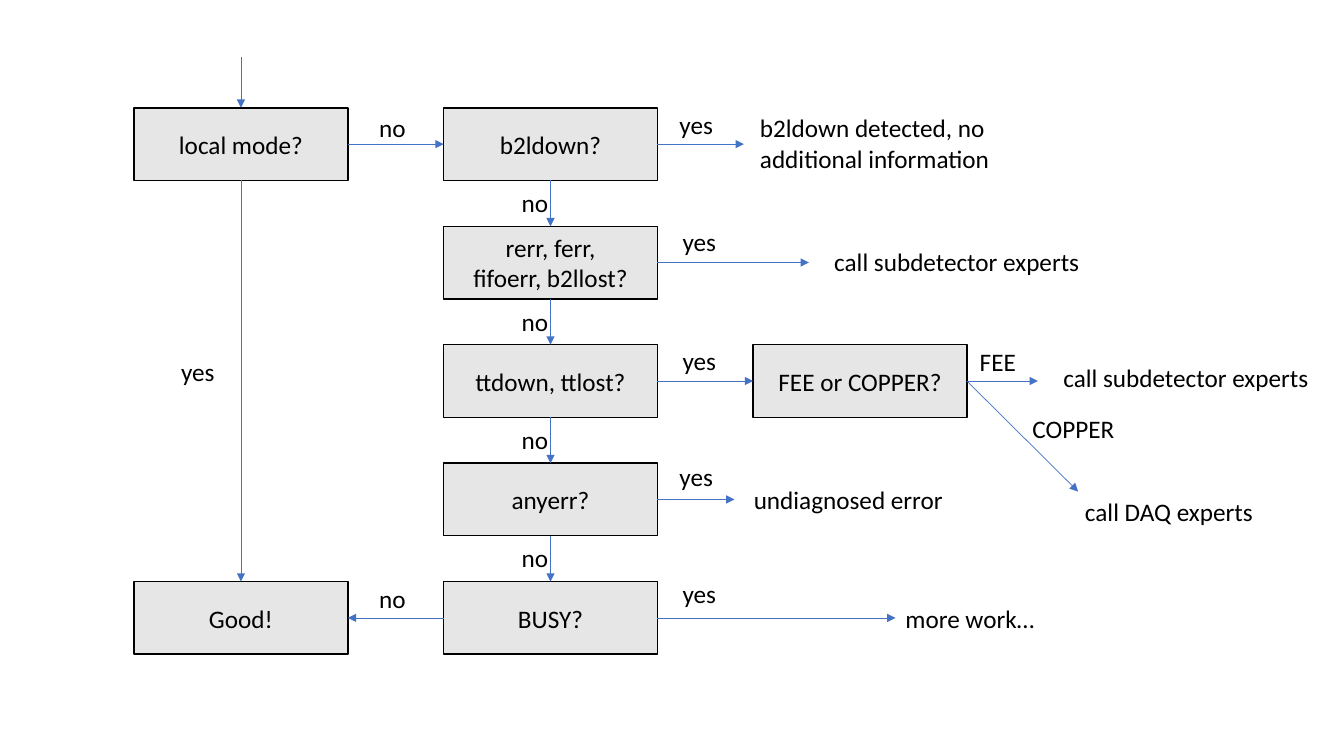
from dataclasses import dataclass

from lxml.etree import SubElement
from pptx import Presentation
from pptx.dml.color import RGBColor
from pptx.enum.shapes import MSO_CONNECTOR, MSO_SHAPE
from pptx.enum.text import MSO_ANCHOR, PP_ALIGN
from pptx.oxml.ns import qn
from pptx.util import Inches, Pt

TOP, LEFT, BOTTOM, RIGHT = range(4)  # connection sites of a rectangle


@dataclass(frozen=True)
class Theme:
    font: str = "Calibri"
    text_size: float = 18
    text: RGBColor = RGBColor(0x00, 0x00, 0x00)
    box_fill: RGBColor = RGBColor(0xE7, 0xE6, 0xE6)
    box_line: RGBColor = RGBColor(0x00, 0x00, 0x00)
    box_line_width: float = 1
    arrow: RGBColor = RGBColor(0x44, 0x72, 0xC4)
    arrow_width: float = 0.5


class Flowchart:
    """Places elements by column and row of a regular grid of boxes."""

    origin_x, origin_y = 1.33, 1.07
    column_pitch, row_pitch = 3.07, 1.175
    box_width, box_height = 2.12, 0.72
    line_height = 0.4

    def __init__(self, page, theme):
        self.page = page
        self.theme = theme

    def x(self, column):
        return Inches(self.origin_x + column * self.column_pitch)

    def y(self, row):
        return Inches(self.origin_y + row * self.row_pitch)

    def set_text(self, frame, text, align):
        frame.text = text
        for para in frame.paragraphs:
            para.alignment = align
            for span in para.runs:
                span.font.name = self.theme.font
                span.font.size = Pt(self.theme.text_size)
                span.font.color.rgb = self.theme.text

    def box(self, column, row, text):
        box = self.page.shapes.add_shape(
            MSO_SHAPE.RECTANGLE, self.x(column), self.y(row),
            Inches(self.box_width), Inches(self.box_height))
        box.shadow.inherit = False
        box.fill.solid()
        box.fill.fore_color.rgb = self.theme.box_fill
        box.line.color.rgb = self.theme.box_line
        box.line.width = Pt(self.theme.box_line_width)
        box.text_frame.vertical_anchor = MSO_ANCHOR.MIDDLE
        self.set_text(box.text_frame, text, PP_ALIGN.CENTER)
        return box

    def label(self, column, row, text, width, lines=1, wrap=False):
        """Free text; width is in columns."""
        label = self.page.shapes.add_textbox(
            self.x(column), self.y(row), Inches(width * self.column_pitch),
            Inches(lines * self.line_height))
        label.text_frame.word_wrap = wrap
        self.set_text(label.text_frame, text, PP_ALIGN.LEFT)

    def yes(self, column, row):
        self.label(column, row, "yes", 0.18)

    def no(self, column, row):
        self.label(column, row, "no", 0.16)

    def arrow(self, start, end):
        arrow = self.page.shapes.add_connector(
            MSO_CONNECTOR.STRAIGHT, *start, *end)
        arrow.line.color.rgb = self.theme.arrow
        arrow.line.width = Pt(self.theme.arrow_width)
        properties = arrow._element.spPr
        SubElement(properties.find(qn("a:ln")), qn("a:tailEnd"),
                   type="triangle")
        SubElement(properties, qn("a:effectLst"))
        return arrow

    def link(self, source, source_site, target, target_site):
        """Arrow glued to two boxes."""
        arrow = self.arrow((0, 0), (0, 0))
        arrow.begin_connect(source, source_site)
        arrow.end_connect(target, target_site)

    def branch(self, source, column, row=None):
        """Arrow from a box's right side to a free point, level by default."""
        middle = source.top + source.height // 2
        end_y = middle if row is None else self.y(row)
        arrow = self.arrow((source.left + source.width, middle),
                           (self.x(column), end_y))
        arrow.begin_connect(source, RIGHT)


def draw(chart):
    local_mode = chart.box(0, 0, "local mode?")
    good = chart.box(0, 4, "Good!")
    questions = ["b2ldown?", "rerr, ferr,\nfifoerr, b2llost?",
                 "ttdown, ttlost?", "anyerr?", "BUSY?"]
    checks = [chart.box(1, row, text) for row, text in enumerate(questions)]
    b2ldown, link_errors, ttdown, anyerr, busy = checks
    origin = chart.box(2, 2, "FEE or COPPER?")

    entry_x = local_mode.left + local_mode.width // 2
    chart.arrow((entry_x, chart.y(-0.43)), (entry_x, local_mode.top))
    chart.link(local_mode, BOTTOM, good, TOP)
    chart.link(local_mode, RIGHT, b2ldown, LEFT)
    chart.link(busy, LEFT, good, RIGHT)
    chart.link(ttdown, RIGHT, origin, LEFT)
    for row, (upper, lower) in enumerate(zip(checks, checks[1:])):
        chart.link(upper, BOTTOM, lower, TOP)
        chart.no(1.22, row + 0.63)

    chart.branch(b2ldown, 1.97)
    chart.branch(link_errors, 2.18)
    chart.branch(anyerr, 1.94)
    chart.branch(busy, 2.46)
    chart.branch(origin, 2.92)
    chart.branch(origin, 3.05, 3.24)

    chart.yes(0.12, 2.06)
    for column, row in [(1.73, -0.03), (1.74, 0.96), (1.74, 1.96),
                        (1.73, 2.94), (1.74, 3.93)]:
        chart.yes(column, row)
    for row in (0, 3.97):
        chart.no(0.76, row)
    chart.label(2.7, 1.97, "FEE", 0.2)
    chart.label(2.87, 2.54, "COPPER", 0.33)

    chart.label(1.99, 0, "b2ldown detected, no additional information",
                0.84, lines=2, wrap=True)
    outcomes = [
        (2.23, 1.13, "call subdetector experts", 0.88),
        (2.97, 2.11, "call subdetector experts", 0.88),
        (3.04, 3.24, "call DAQ experts", 0.87),
        (1.97, 3.14, "undiagnosed error", 0.72),
        (2.46, 4.14, "more work…", 1.03),
    ]
    for column, row, text, width in outcomes:
        chart.label(column, row, text, width, wrap=True)


def main():
    deck = Presentation()
    deck.slide_width, deck.slide_height = Inches(13.33), Inches(7.5)
    page = deck.slides.add_slide(deck.slide_layouts[6])
    draw(Flowchart(page, Theme()))
    deck.save("out.pptx")


if __name__ == "__main__":
    main()
